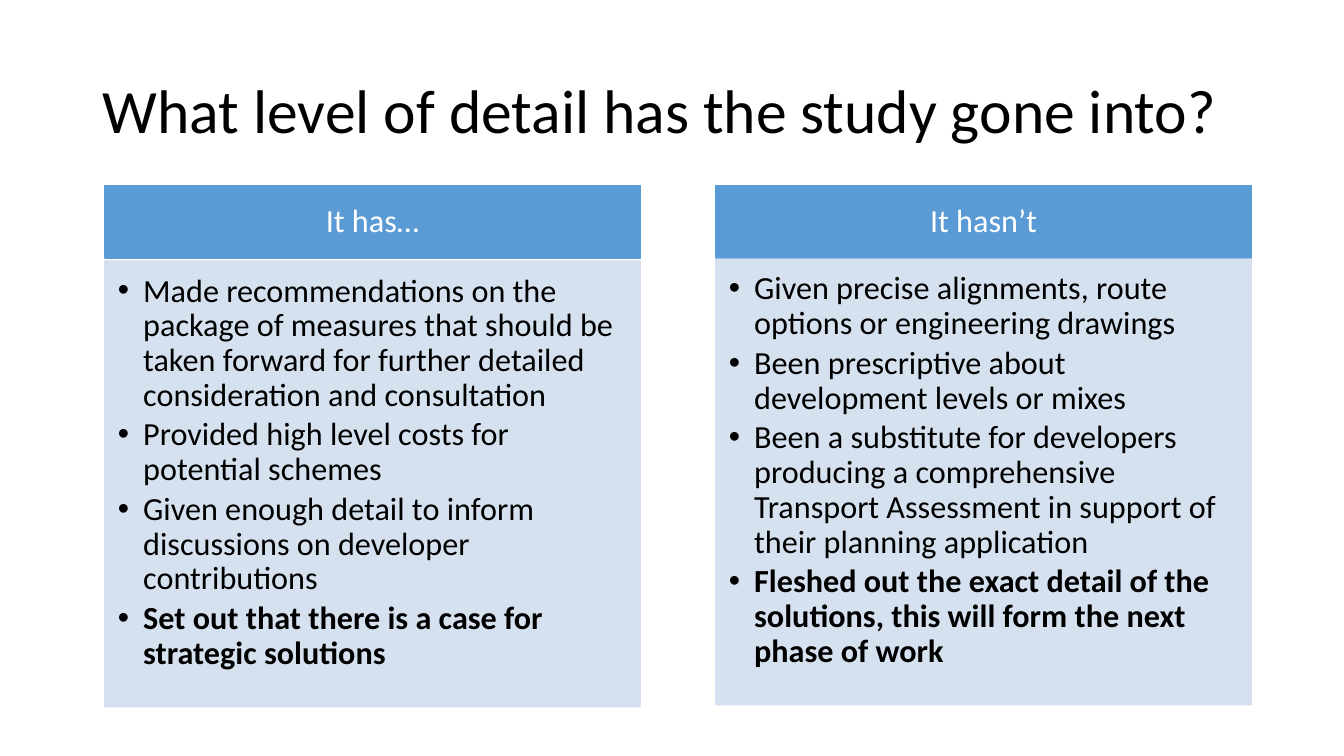
from lxml.etree import SubElement
from pptx import Presentation
from pptx.dml.color import RGBColor
from pptx.enum.text import MSO_ANCHOR, MSO_AUTO_SIZE, PP_ALIGN
from pptx.oxml.ns import qn
from pptx.util import Inches, Pt

TITLE = "What level of detail has the study gone into?"
COLUMNS = [
    {
        "header": "It has…",
        "body_top": 2.59,
        "points": [
            "Made recommendations on the package of measures that should be taken forward for further detailed consideration and consultation",
            "Provided high level costs for potential schemes",
            "Given enough detail to inform discussions on developer contributions",
            "Set out that there is a case for strategic solutions",
        ],
    },
    {
        "header": "It hasn’t",
        "body_top": 2.57,
        "points": [
            "Given precise alignments, route options or engineering drawings",
            "Been prescriptive about development levels or mixes",
            "Been a substitute for developers producing a comprehensive Transport Assessment in support of their planning application",
            "Fleshed out the exact detail of the solutions, this will form the next phase of work",
        ],
    },
]

BLACK = RGBColor(0x00, 0x00, 0x00)
WHITE = RGBColor(0xFF, 0xFF, 0xFF)
BLUE = RGBColor(0x5B, 0x9B, 0xD5)
PALE_BLUE = RGBColor(0xD2, 0xDE, 0xEF)

FONT = "Calibri"
TEXT_SIZE = 23
COLUMN_LEFT, COLUMN_STEP, COLUMN_WIDTH = 1.04, 6.06, 5.31
HEADER_TOP, HEADER_HEIGHT, BODY_HEIGHT = 1.84, 0.72, 4.42
COMPARISON_LAYOUT = 4


def place(shape, left, top, width, height):
    shape.left, shape.top = Inches(left), Inches(top)
    shape.width, shape.height = Inches(width), Inches(height)


def paint(shape, color, opacity=100):
    shape.fill.solid()
    shape.fill.fore_color.rgb = color
    shape.line.color.rgb = color
    shape.line.width = Pt(1)
    if opacity < 100:
        for fill_color in list(shape.element.spPr.iter(qn("a:srgbClr"))):
            SubElement(fill_color, qn("a:alpha"), val=str(opacity * 1000))


def write(shape, lines, size=TEXT_SIZE, color=BLACK, align=PP_ALIGN.LEFT,
          anchor=MSO_ANCHOR.MIDDLE, insets=(0.1, 0.05, 0.1, 0.05),
          space_after=0, bullets=False, bold_last=False):
    frame = shape.text_frame
    frame.auto_size = MSO_AUTO_SIZE.NONE
    frame.word_wrap = True
    frame.vertical_anchor = anchor
    frame.margin_left, frame.margin_top, frame.margin_right, frame.margin_bottom = map(Inches, insets)
    frame.text = "\n".join(lines)
    for number, paragraph in enumerate(frame.paragraphs, start=1):
        paragraph.alignment = align
        paragraph.line_spacing = 0.9
        paragraph.space_before = Pt(0)
        paragraph.space_after = Pt(space_after)
        if bullets:
            properties = paragraph._p.get_or_add_pPr()
            properties.set("marL", str(Inches(0.25)))
            properties.set("indent", str(-Inches(0.25)))
            SubElement(properties, qn("a:buChar"), char="•")
        font = paragraph.runs[0].font
        font.name = FONT
        font.size = Pt(size)
        font.color.rgb = color
        font.bold = bold_last and number == len(lines)


def main():
    presentation = Presentation()
    presentation.slide_width = Inches(13.33)
    presentation.slide_height = Inches(7.5)
    slide = presentation.slides.add_slide(presentation.slide_layouts[COMPARISON_LAYOUT])
    title, *column_shapes = slide.placeholders

    place(title, 0.92, 0.4, 11.5, 1.45)
    write(title, [TITLE], size=44)

    for index, column in enumerate(COLUMNS):
        header, body = column_shapes[2 * index:2 * index + 2]
        left = COLUMN_LEFT + index * COLUMN_STEP

        place(header, left, HEADER_TOP, COLUMN_WIDTH, HEADER_HEIGHT)
        paint(header, BLUE)
        write(header, [column["header"]], color=WHITE, align=PP_ALIGN.CENTER,
              insets=(0.18, 0.1, 0.18, 0.1))

        place(body, left, column["body_top"], COLUMN_WIDTH, BODY_HEIGHT)
        paint(body, PALE_BLUE, opacity=90)
        write(body, column["points"], anchor=MSO_ANCHOR.TOP,
              insets=(0.13, 0.13, 0.18, 0.2), space_after=3.45,
              bullets=True, bold_last=True)

    presentation.save("out.pptx")


if __name__ == "__main__":
    main()
